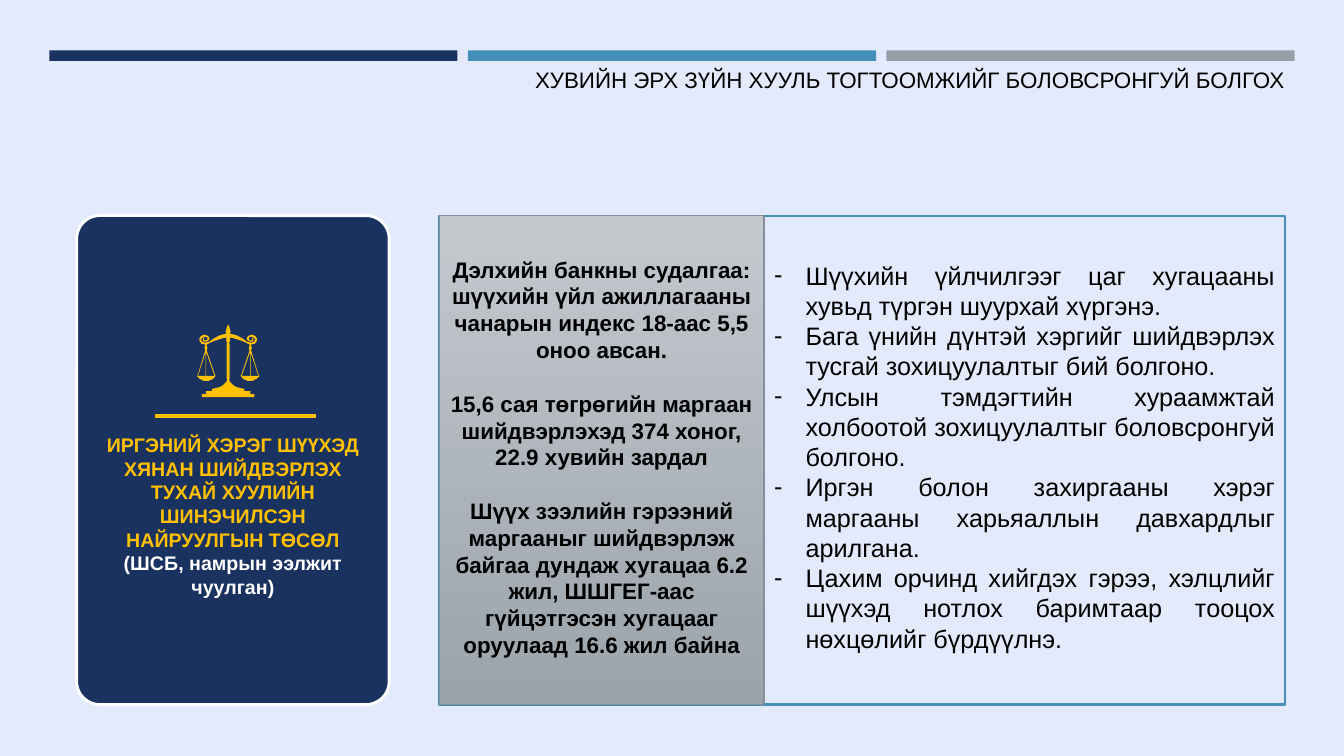
"""Builds a slide on a draft civil procedure law, its grounds and its aims."""
from dataclasses import dataclass

from lxml.etree import SubElement
from pptx import Presentation
from pptx.dml.color import RGBColor
from pptx.enum.shapes import MSO_CONNECTOR, MSO_SHAPE
from pptx.enum.text import MSO_ANCHOR, PP_ALIGN
from pptx.oxml.ns import qn
from pptx.util import Pt


@dataclass(frozen=True)
class Theme:
    font: str = "Arial"
    background: str = "E3EAFB"
    navy: str = "1A3260"
    blue: str = "4590B8"
    grey: str = "969FA7"
    grey_top: str = "C4C9CE"
    grey_bottom: str = "9BA3AB"
    grey_edge: str = "858F99"
    gold: str = "FFC000"
    white: str = "FFFFFF"
    black: str = "000000"
    title_size: int = 16
    card_size: int = 14
    facts_size: int = 16
    goals_size: int = 18


TITLE = "ХУВИЙН ЭРХ ЗҮЙН ХУУЛЬ ТОГТООМЖИЙГ БОЛОВСРОНГУЙ БОЛГОХ"
LAW = ("ИРГЭНИЙ ХЭРЭГ ШҮҮХЭД ХЯНАН ШИЙДВЭРЛЭХ ТУХАЙ ХУУЛИЙН "
       "ШИНЭЧИЛСЭН НАЙРУУЛГЫН ТӨСӨЛ")
SESSION = "(ШСБ, намрын ээлжит чуулган)"
FACTS = [
    "Дэлхийн банкны судалгаа:",
    "шүүхийн үйл ажиллагааны чанарын индекс 18-аас 5,5 оноо авсан.",
    "15,6 сая төгрөгийн маргаан шийдвэрлэхэд 374 хоног, 22.9 хувийн зардал",
    "Шүүх зээлийн гэрээний маргааныг шийдвэрлэж байгаа дундаж хугацаа 6.2 жил, "
    "ШШГЕГ-аас гүйцэтгэсэн хугацааг оруулаад 16.6 жил байна",
]
GOALS = [
    "Шүүхийн үйлчилгээг цаг хугацааны хувьд түргэн шуурхай хүргэнэ.",
    "Бага үнийн дүнтэй хэргийг шийдвэрлэх тусгай зохицуулалтыг бий болгоно.",
    "Улсын тэмдэгтийн хураамжтай холбоотой зохицуулалтыг боловсронгуй болгоно.",
    "Иргэн болон захиргааны хэрэг маргааны харьяаллын давхардлыг арилгана.",
    "Цахим орчинд хийгдэх гэрээ, хэлцлийг шүүхэд нотлох баримтаар тооцох "
    "нөхцөлийг бүрдүүлнэ.",
]

SCALES_HALF = [
    (0, 0), (1, 2), (2.5, 7), (1.5, 9), (6, 10), (9, 11), (14.5, 14),
    (18.5, 17), (20.5, 17.5), (22.5, 18), (25, 17.5), (26.5, 16), (26.5, 14),
    (23.5, 12), (20.5, 13), (20.5, 15), (22.5, 16), (24.5, 15), (23.5, 14),
    (23.5, 13), (25, 14), (25, 16), (23.5, 17), (21.5, 17), (18.5, 15),
    (18.5, 13), (20.5, 11), (24.5, 10), (27.5, 12), (28.5, 14), (28.5, 16),
    (26.5, 19), (22.5, 20), (23.5, 23), (22.8, 26), (30.5, 51), (31.3, 51),
    (28, 54), (24, 56), (19.5, 56), (15, 54), (12.5, 51), (13, 50),
    (21.2, 26), (20.5, 23), (21.5, 20), (19.5, 19), (14.5, 16.5), (9.5, 15),
    (5, 13.5), (1.5, 13), (2, 16), (1, 18), (1.5, 20), (1.5, 53), (1, 55),
    (2, 57), (5, 60), (8, 62), (16, 64), (16, 66), (22, 66), (22, 69),
    (26, 69), (26, 72), (0, 72),
]
PAN_GAPS = [[(21.7, 27.5), (21.7, 51), (13.5, 51)],
            [(22.3, 27.5), (30, 51), (22.3, 51)]]


class SlideBuilder:
    def __init__(self, prs, theme):
        self.theme = theme
        self.s = prs.slides.add_slide(prs.slide_layouts[5])
        self.fill(self.s.background, theme.background)

    def fill(self, item, color):
        item.fill.solid()
        item.fill.fore_color.rgb = RGBColor.from_string(color)

    def outline(self, sp, color, width):
        sp.line.color.rgb = RGBColor.from_string(color)
        sp.line.width = Pt(width)

    def box(self, at, color=None, line=None, width=1, kind=MSO_SHAPE.RECTANGLE):
        sp = self.s.shapes.add_shape(kind, *map(Pt, at))
        sp.shadow.inherit = False
        if color:
            self.fill(sp, color)
        else:
            sp.fill.background()
        if line:
            self.outline(sp, line, width)
        else:
            sp.line.fill.background()
        return sp

    def gradient(self, sp, top, bottom):
        sp.fill.gradient()
        sp.fill.gradient_angle = 270
        for stop, color, place in zip(sp.fill.gradient_stops, (top, bottom), (0, 1)):
            stop.color.rgb = RGBColor.from_string(color)
            stop.position = place

    def text(self, sp, lines, size, colors, bold=False, align=PP_ALIGN.CENTER,
             anchor=MSO_ANCHOR.MIDDLE):
        tf = sp.text_frame
        tf.word_wrap = True
        tf.vertical_anchor = anchor
        tf.text = "\n".join(lines)
        for p, color in zip(tf.paragraphs, colors):
            p.alignment = align
            font = p.runs[0].font
            font.name, font.size, font.bold = self.theme.font, Pt(size), bold
            font.color.rgb = RGBColor.from_string(color)
        return tf

    def title(self, at, text):
        sp = self.s.shapes.title
        sp.left, sp.top, sp.width, sp.height = map(Pt, at)
        self.text(sp, [text], self.theme.title_size, [self.theme.black])

    def dash_list(self, at, lines, size, indent):
        sp = self.s.shapes.add_textbox(*map(Pt, at))
        tf = self.text(sp, lines, size, [self.theme.black] * len(lines),
                       align=PP_ALIGN.JUSTIFY, anchor=MSO_ANCHOR.TOP)
        for p in tf.paragraphs:
            pPr = p._p.get_or_add_pPr()
            pPr.set("marL", str(Pt(indent)))
            pPr.set("indent", str(-Pt(indent)))
            SubElement(pPr, qn("a:buFont")).set("typeface", self.theme.font)
            SubElement(pPr, qn("a:buChar")).set("char", "-")

    def rule(self, x1, x2, y, color, width):
        sp = self.s.shapes.add_connector(MSO_CONNECTOR.STRAIGHT,
                                         Pt(x1), Pt(y), Pt(x2), Pt(y))
        self.outline(sp, color, width)
        SubElement(sp._element.spPr, qn("a:effectLst"))

    def scales(self, cx, top, unit, color):
        def mirror(points):
            return [(-x, y) for x, y in points]

        contours = [SCALES_HALF + mirror(SCALES_HALF[-2:0:-1])]
        contours += PAN_GAPS + [mirror(gap) for gap in PAN_GAPS]
        contours = [[(Pt(x * unit), Pt(y * unit)) for x, y in c] for c in contours]
        builder = self.s.shapes.build_freeform(*contours[0][0])
        for i, contour in enumerate(contours):
            if i:
                builder.move_to(*contour[0])
            builder.add_line_segments(contour[1:], close=True)
        sp = builder.convert_to_shape(Pt(cx), Pt(top))
        sp.shadow.inherit = False
        self.fill(sp, color)
        sp.line.fill.background()


def main():
    prs = Presentation()
    prs.slide_width, prs.slide_height = Pt(960), Pt(540)
    t = Theme()
    b = SlideBuilder(prs, t)

    for i, color in enumerate((t.navy, t.blue, t.grey)):
        b.box((35.2 + i * 299, 36, 291.6, 7.5), color)
    b.title((360, 43.2, 580, 26.6), TITLE)

    top, height = 154, 349.2
    card = b.box((54.8, top, 223.2, height), t.navy, t.white, 2,
                 MSO_SHAPE.ROUNDED_RECTANGLE)
    card.adjustments[0] = 0.074
    tf = b.text(card, [LAW, SESSION], t.card_size, [t.gold, t.white], bold=True)
    tf.margin_top = Pt(83)
    b.scales(163, 231.8, 0.72, t.gold)
    b.rule(111, 225.4, 297.2, t.gold, 2.25)

    b.box((313.8, top, 604, height), line=t.blue, width=1.5)
    b.dash_list((545.8, 182.2, 372, 291), GOALS, t.goals_size, 22.5)
    facts = b.box((313.8, top, 232, height), t.grey, t.grey_edge)
    b.gradient(facts, t.grey_top, t.grey_bottom)
    tf = b.text(facts, FACTS, t.facts_size, [t.black] * len(FACTS), bold=True)
    tf.margin_bottom = Pt(8)
    for p in tf.paragraphs[2:]:
        p.space_before = Pt(19)

    prs.save("out.pptx")


if __name__ == "__main__":
    main()
